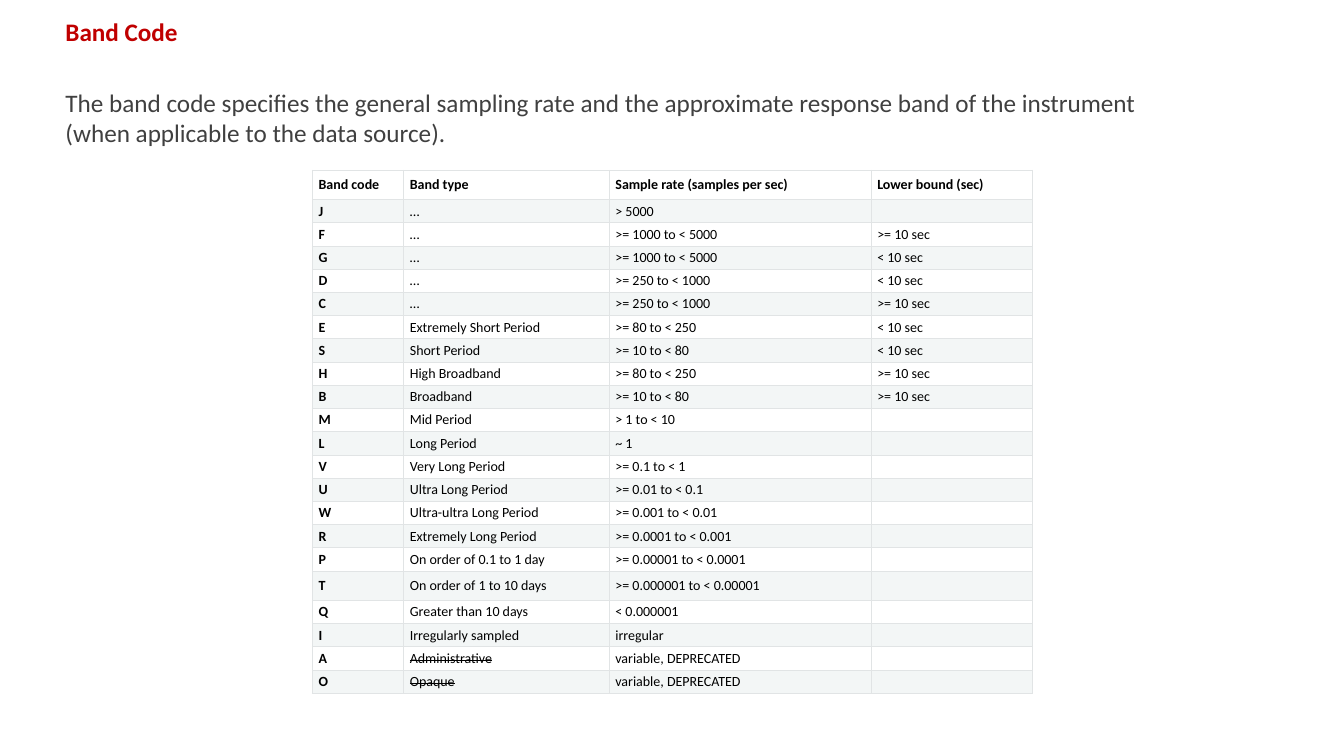
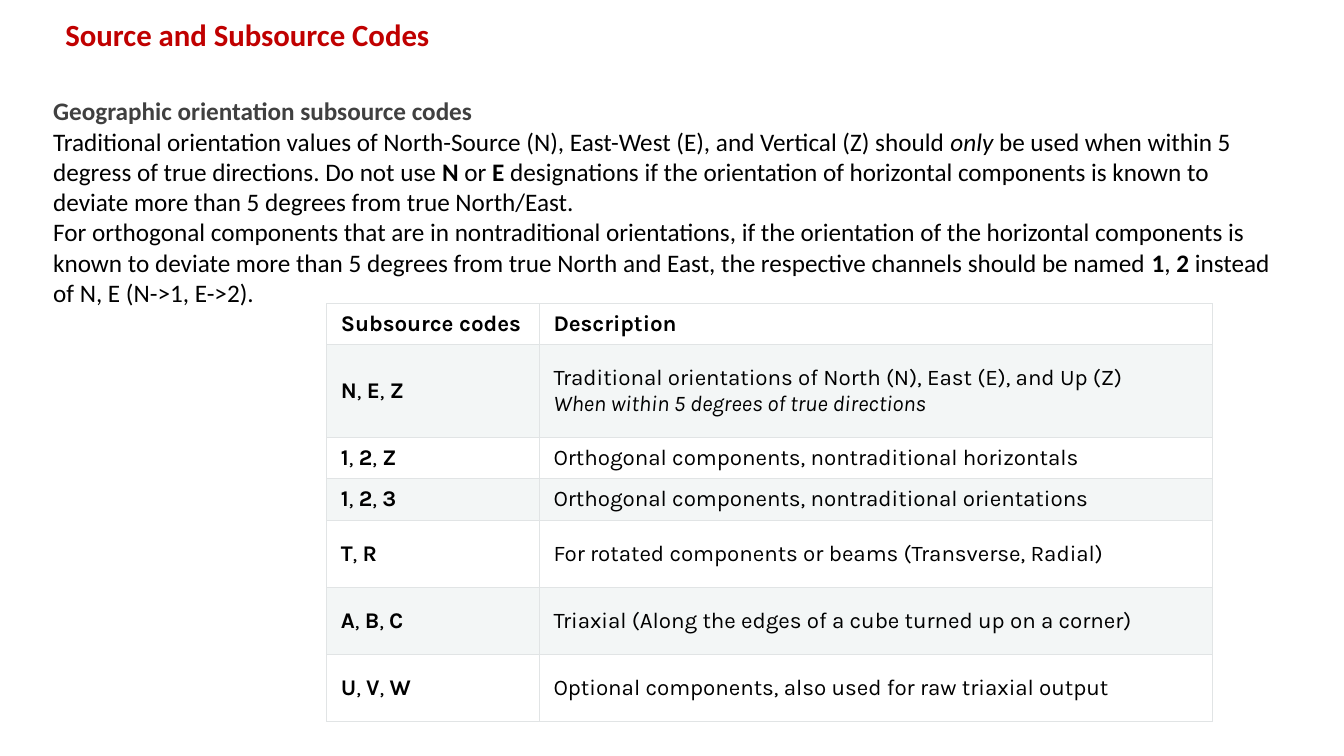
from lxml import etree
from pptx import Presentation
from pptx.dml.color import RGBColor
from pptx.enum import text as t
from pptx.oxml.ns import qn
from pptx.util import Cm, Pt

RED = RGBColor(0xC0, 0x00, 0x00)
GREY = RGBColor(0x40, 0x40, 0x40)
BLACK = RGBColor(0x00, 0x00, 0x00)
WHITE = RGBColor(0xFF, 0xFF, 0xFF)
BAND = RGBColor(0xF3, 0xF6, 0xF6)
RULE = RGBColor(0xE1, 0xE4, 0xE5)

MARKS = {"*": "bold", "_": "italic", "^": "strike"}

BANDS = [
    ("Band code", "*Band type*", "*Sample rate (samples per sec)*", "*Lower bound (sec)*"),
    ("J", "…", "> 5000", ""),
    ("F", "…", ">= 1000 to < 5000", ">= 10 sec"),
    ("G", "…", ">= 1000 to < 5000", "< 10 sec"),
    ("D", "…", ">= 250 to < 1000", "< 10 sec"),
    ("C", "…", ">= 250 to < 1000", ">= 10 sec"),
    ("E", "Extremely Short Period", ">= 80 to < 250", "< 10 sec"),
    ("S", "Short Period", ">= 10 to < 80", "< 10 sec"),
    ("H", "High Broadband", ">= 80 to < 250", ">= 10 sec"),
    ("B", "Broadband", ">= 10 to < 80", ">= 10 sec"),
    ("M", "Mid Period", "> 1 to < 10", ""),
    ("L", "Long Period", "~ 1", ""),
    ("V", "Very Long Period", ">= 0.1 to < 1", ""),
    ("U", "Ultra Long Period", ">= 0.01 to < 0.1", ""),
    ("W", "Ultra-ultra Long Period", ">= 0.001 to < 0.01", ""),
    ("R", "Extremely Long Period", ">= 0.0001 to < 0.001", ""),
    ("P", "On order of 0.1 to 1 day", ">= 0.00001 to < 0.0001", ""),
    ("T", "On order of 1 to 10 days", ">= 0.000001 to < 0.00001", ""),
    ("Q", "Greater than 10 days", "< 0.000001", ""),
    ("I", "Irregularly sampled", "irregular", ""),
    ("A", "^Administrative^", "variable, DEPRECATED", ""),
    ("O", "^Opaque^", "variable, DEPRECATED", ""),
]
BANDS = [(f"*{code}*", *rest) for code, *rest in BANDS]

CODES = [
    ("*Subsource codes*", "*Description*"),
    ("*N*, *E*, *Z*", "Traditional orientations of North (N), East (E), and Up (Z)\n"
                      "_When within 5 degrees of true directions_"),
    ("*1*, *2*, *Z*", "Orthogonal components, nontraditional horizontals"),
    ("*1*, *2*, *3*", "Orthogonal components, nontraditional orientations"),
    ("*T*, *R*", "For rotated components or beams (Transverse, Radial)"),
    ("*A*, *B*, *C*", "Triaxial (Along the edges of a cube turned up on a corner)"),
    ("*U*, *V*, *W*", "Optional components, also used for raw triaxial output"),
]


def split(line):
    """Yield (text, styles on) pieces; each mark switches its style on or off."""
    part, live = "", set()
    for char in line:
        if char in MARKS:
            if part:
                yield part, set(live)
            part = ""
            live ^= {MARKS[char]}
        else:
            part += char
    if part:
        yield part, live


def write(para, line, size=18, color=BLACK, face="Calibri"):
    for part, live in split(line):
        run = para.add_run()
        run.text = part
        font = run.font
        font.size, font.name = Pt(size), face
        font.color.rgb = color
        font.bold, font.italic = "bold" in live, "italic" in live
        if "strike" in live:
            run._r.get_or_add_rPr().set("strike", "sngStrike")
    if not line:
        etree.SubElement(para._p, qn("a:endParaRPr"), sz=str(size * 100))


def fill(frame, words, **form):
    first, *rest = words.split("\n")
    write(frame.paragraphs[0], first, **form)
    for line in rest:
        write(frame.add_paragraph(), line, **form)


def box(slide, left, top, width, height, words, **form):
    frame = slide.shapes.add_textbox(Cm(left), Cm(top), Cm(width), Cm(height)).text_frame
    frame.word_wrap = True
    fill(frame, words, **form)
    return frame


def title(slide, words, size):
    frame = box(slide, 1.4, 0.28, 16.94, 1.1, f"*{words}*", size=size, color=RED)
    frame.paragraphs[0].space_after = Pt(18)


def edge(cell):
    """Rule all four sides of a cell."""
    props = cell._tc.get_or_add_tcPr()
    for spot, side in enumerate("LRTB"):
        line = etree.Element(qn(f"a:ln{side}"), w=str(Pt(0.75)))
        paint = etree.SubElement(line, qn("a:solidFill"))
        etree.SubElement(paint, qn("a:srgbClr"), val=str(RULE))
        props.insert(spot, line)


def grid(slide, left, top, cols, rows, cells, pad, **form):
    """Draw a banded table; pad is the side inset, twice the top one."""
    table = slide.shapes.add_table(len(rows), len(cols), Cm(left), Cm(top),
                                   Cm(sum(cols)), Cm(sum(rows))).table
    table.first_row = table.horz_banding = False
    for col, width in zip(table.columns, cols):
        col.width = Cm(width)
    for num, (row, height, line) in enumerate(zip(table.rows, rows, cells)):
        row.height = Cm(height)
        for cell, words in zip(row.cells, line):
            cell.margin_left = cell.margin_right = Cm(pad)
            cell.margin_top = cell.margin_bottom = Cm(pad / 2)
            cell.vertical_anchor = t.MSO_ANCHOR.MIDDLE
            edge(cell)
            cell.fill.solid()
            cell.fill.fore_color.rgb = BAND if num % 2 else WHITE
            fill(cell.text_frame, words, **form)


def bands(slide):
    title(slide, "Band Code", 18)
    box(slide, 1.4, 2.08, 28.55, 1.8,
        "The band code specifies the general sampling rate and the approximate response "
        "band of the instrument (when applicable to the data source).", color=GREY)
    rows = [0.74 if line[0] in ("*Band code*", "*T*") else 0.58 for line in BANDS]
    grid(slide, 7.87, 4.29, [2.3, 5.18, 6.6, 4.07], rows, BANDS, 0.16, size=10)


def codes(slide):
    title(slide, "Source and Subsource Codes", 22)
    frame = box(slide, 1.09, 2.29, 31.4, 6.4,
                "*Geographic orientation subsource codes*", color=GREY)
    write(frame.add_paragraph(),
          "Traditional orientation values of North-Source (N), East-West (E), and Vertical (Z) "
          "should _only_ be used when within 5 degress of true directions. Do not use *N* or *E* "
          "designations if the orientation of horizontal components is known to deviate more "
          "than 5 degrees from true North/East.")
    write(frame.add_paragraph(),
          "For orthogonal components that are in nontraditional orientations, if the orientation "
          "of the horizontal components is known to deviate more than 5 degrees from true North "
          "and East, the respective channels should be named *1*, *2* instead of N, E "
          "(N->1, E->2).")
    rows = [1.04, 2.34, 1.03, 1.03] + [1.69] * 3
    grid(slide, 8.23, 7.65, [5.36, 16.97], rows, CODES, 0.36, size=16, face="Karla")


def main():
    deck = Presentation()
    deck.slide_width, deck.slide_height = Cm(33.87), Cm(19.05)
    for draw in (bands, codes):
        draw(deck.slides.add_slide(deck.slide_layouts[6]))
    deck.save("out.pptx")


if __name__ == "__main__":
    main()
